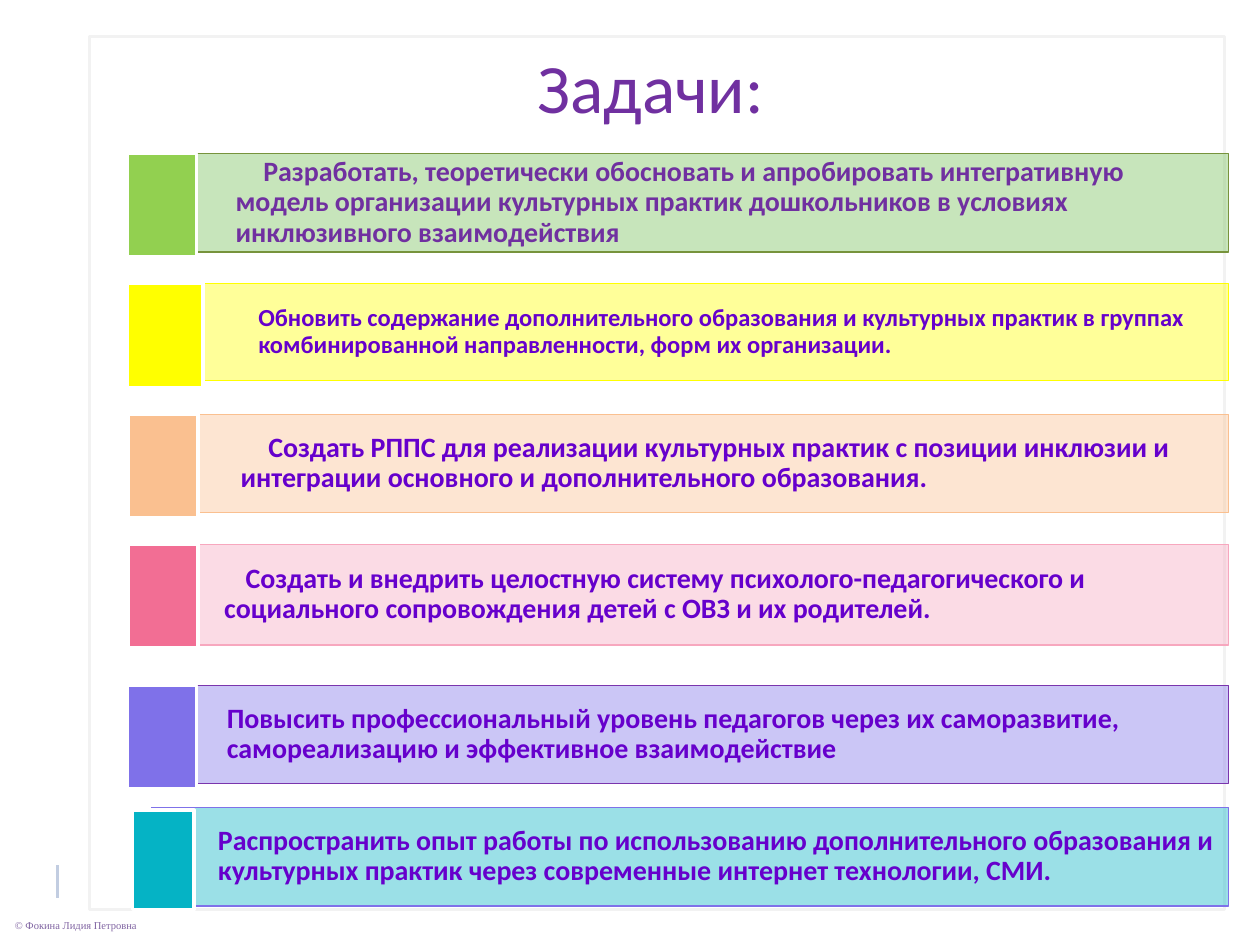
from lxml import etree
from pptx import Presentation
from pptx.dml.color import RGBColor
from pptx.enum import shapes, text
from pptx.oxml.ns import qn
from pptx.util import Inches, Pt


def color(value):
    return RGBColor.from_string(value)


def add_block(page, place, fill, line, width, opacity=100):
    block = page.shapes.add_shape(shapes.MSO_SHAPE.RECTANGLE, *map(Inches, place))
    block.shadow.inherit = False
    block.fill.solid()
    block.fill.fore_color.rgb = color(fill)
    block.line.color.rgb = color(line)
    block.line.width = Pt(width)
    if opacity < 100:
        tint = block._element.spPr.find(qn("a:solidFill"))[0]
        etree.SubElement(tint, qn("a:alpha"), val=str(opacity * 1000))
    return block


deck = Presentation()
deck.slide_width = Inches(10)
deck.slide_height = Inches(7.5)
page = deck.slides.add_slide(deck.slide_layouts[6])

add_block(page, (0.71, 0.29, 9.01, 6.93), "FFFFFF", "F2F2F2", 2, 70)

labels = [
    ((0.02, 7.24, 1.2, 0.2), "© Фокина Лидия Петровна", 6, "Times New Roman",
     "8064A2", text.PP_ALIGN.LEFT, text.MSO_ANCHOR.MIDDLE, False),
    ((0.83, 0.3, 8.67, 0.69), "Задачи:", 39.6, "Calibri",
     "7030A0", text.PP_ALIGN.CENTER, text.MSO_ANCHOR.TOP, True),
]
for place, wording, size, font, ink, align, anchor, wrap in labels:
    box = page.shapes.add_textbox(*map(Inches, place))
    frame = box.text_frame
    frame.word_wrap = wrap
    frame.vertical_anchor = anchor
    frame.text = wording
    para = frame.paragraphs[0]
    para.alignment = align
    span = para.runs[0]
    span.font.size = Pt(size)
    span.font.name = font
    span.font.color.rgb = color(ink)

tasks = [
    ((1.34, 1.22, 0.78), (1.01, 1.22, 0.55, 0.82), "73BF55", "77933C", "92D050", "7030A0", 16, 0.22,
     "Разработать, теоретически обосновать и апробировать интегративную модель "
     "организации культурных практик дошкольников в условиях инклюзивного взаимодействия"),
    ((1.52, 2.25, 0.77), (1.01, 2.25, 0.6, 0.83), "FFFF00", "FFFF00", "FFFF00", "6600CC", 14, 0,
     "Обновить содержание дополнительного образования и культурных практик в группах "
     "комбинированной направленности, форм их организации."),
    ((1.38, 3.29, 0.78), (1.02, 3.29, 0.55, 0.82), "FAC090", "FAC090", "FAC090", "6600CC", 16, 0.22,
     "Создать РППС для реализации культурных практик с позиции инклюзии и "
     "интеграции основного и дополнительного образования."),
    ((1.25, 4.32, 0.8), (1.02, 4.32, 0.55, 0.82), "F7A7BE", "F7A7BE", "F26E94", "6600CC", 16, 0.17,
     "Создать и внедрить целостную систему психолого-педагогического и "
     "социального сопровождения детей с ОВЗ и их родителей."),
    ((1.27, 5.44, 0.78), (1.01, 5.44, 0.55, 0.82), "7F71E9", "7A35AD", "7F71E9", "6600CC", 16, 0,
     "Повысить профессиональный уровень педагогов через их саморазвитие, "
     "самореализацию и эффективное взаимодействие"),
    ((1.2, 6.41, 0.78), (1.05, 6.43, 0.49, 0.79), "05B3C5", "7F71E9", "05B3C5", "6600CC", 16, 0,
     "Распространить опыт работы по использованию дополнительного образования и "
     "культурных практик через современные интернет технологии, СМИ."),
]
band_right = 9.75
for (left, top, height), marker, fill, line, accent, ink, size, indent, wording in tasks:
    band = add_block(page, (left, top, band_right - left, height), fill, line, 0.75, 40)
    frame = band.text_frame
    frame.word_wrap = True
    frame.vertical_anchor = text.MSO_ANCHOR.MIDDLE
    frame.margin_left = Inches(0.53)
    frame.margin_top = frame.margin_right = frame.margin_bottom = Inches(0.07)
    frame.text = wording
    para = frame.paragraphs[0]
    para.alignment = text.PP_ALIGN.LEFT
    para.line_spacing = 0.9
    if indent:
        para._p.get_or_add_pPr().set("indent", str(Inches(indent)))
    span = para.runs[0]
    span.font.size = Pt(size)
    span.font.name = "Calibri"
    span.font.bold = True
    span.font.color.rgb = color(ink)
    add_block(page, marker, accent, "FFFFFF", 2)

add_block(page, (0.43, 6.85, 0.05, 0.29), "C2CDE1", "FFFFFF", 2)

deck.save("out.pptx")
